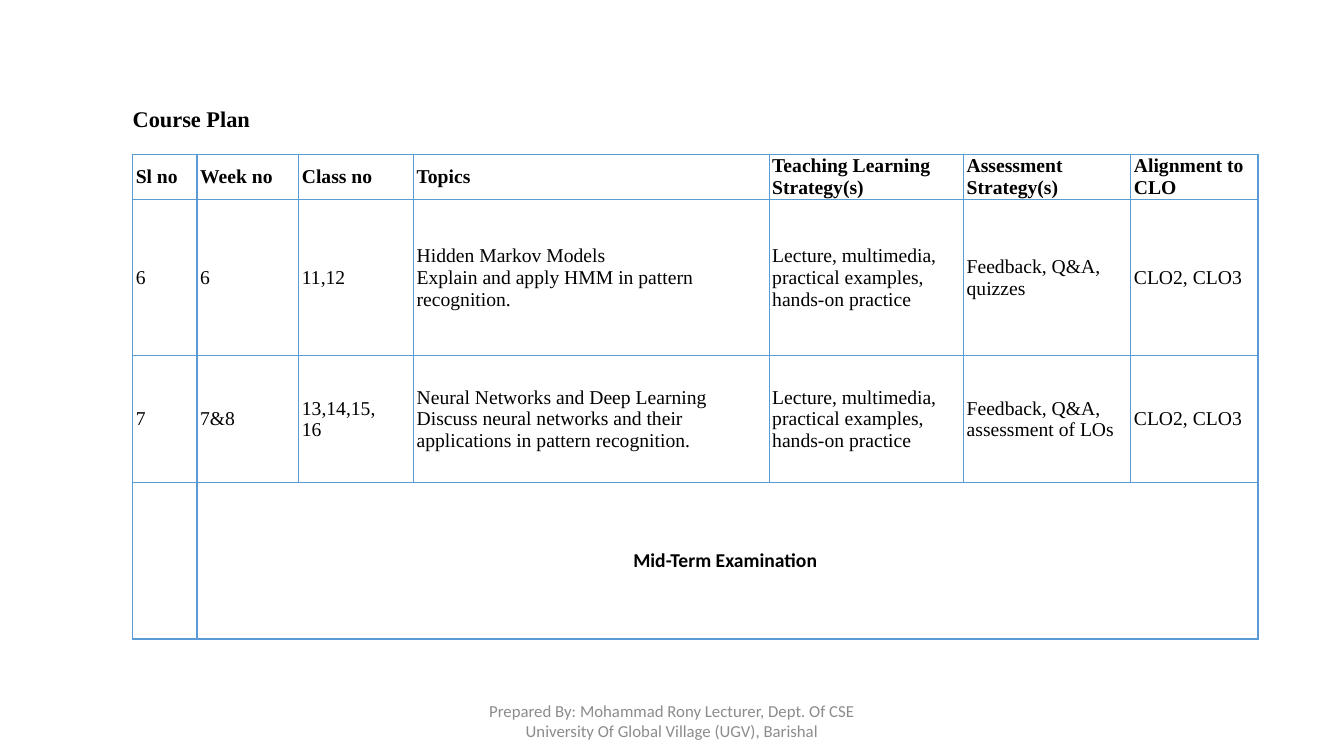
from lxml.etree import SubElement
from pptx import Presentation
from pptx.dml.color import RGBColor
from pptx.enum.text import MSO_ANCHOR, PP_ALIGN
from pptx.oxml.ns import qn
from pptx.util import Pt

BLACK = RGBColor(0x00, 0x00, 0x00)
GREY = RGBColor(0x8C, 0x8C, 0x8C)
BLUE = RGBColor(0x5B, 0x9B, 0xD5)
SERIF, SANS = "Times New Roman", "Calibri"

COLUMN_WIDTHS = [46, 72.7, 82, 254, 138.9, 119.5, 90.8]
ROW_HEIGHTS = [28, 111.6, 90.7, 111.6]
TEACHING = "Lecture, multimedia, practical examples, hands-on practice"
COURSE_ROWS = [
    ["Sl no", "Week no", "Class no", "Topics", "Teaching Learning Strategy(s)",
     "Assessment Strategy(s)", "Alignment to CLO"],
    ["6", "6", "11,12",
     "Hidden Markov Models\nExplain and apply HMM in pattern recognition.",
     TEACHING, "Feedback, Q&A, quizzes", "CLO2, CLO3"],
    ["7", "7&8", "13,14,15,\n16",
     "Neural Networks and Deep Learning\n"
     "Discuss neural networks and their applications in pattern recognition.",
     TEACHING, "Feedback, Q&A, assessment of LOs", "CLO2, CLO3"],
]
CELL_MARGINS = {"margin_left": Pt(2.2), "margin_top": Pt(0.7),
                "margin_right": Pt(0.7), "margin_bottom": Pt(0.7)}
NO_MARGINS = dict.fromkeys(CELL_MARGINS, 0)


def set_attributes(target, values):
    for name, value in values.items():
        setattr(target, name, value)


def write_text(tf, text, color=BLACK, align=PP_ALIGN.LEFT, **font):
    """Fill a text frame, one paragraph per line of text."""
    tf.text = text
    for p in tf.paragraphs:
        p.alignment = align
        for r in p.runs:
            set_attributes(r.font, font)
            r.font.color.rgb = color


def add_text(slide, left, top, width, height, text, frame, **style):
    tf = slide.shapes.add_textbox(Pt(left), Pt(top), Pt(width), Pt(height)).text_frame
    tf.word_wrap = True
    set_attributes(tf, frame)
    write_text(tf, text, **style)


def add_borders(cell):
    tc_pr = cell._tc.get_or_add_tcPr()
    for side in ("lnL", "lnR", "lnT", "lnB"):
        ln = SubElement(tc_pr, qn(f"a:{side}"), w=str(Pt(1)))
        fill = SubElement(ln, qn("a:solidFill"))
        SubElement(fill, qn("a:srgbClr"), val=str(BLUE))


def add_course_table(slide, left, top):
    table = slide.shapes.add_table(
        len(ROW_HEIGHTS), len(COLUMN_WIDTHS), Pt(left), Pt(top),
        Pt(sum(COLUMN_WIDTHS)), Pt(sum(ROW_HEIGHTS))).table
    set_attributes(table, {"first_row": False, "horz_banding": False})
    for column, width in zip(table.columns, COLUMN_WIDTHS):
        column.width = Pt(width)
    for row, height in zip(table.rows, ROW_HEIGHTS):
        row.height = Pt(height)
    for cell in table.iter_cells():
        add_borders(cell)
        cell.fill.background()
        cell.vertical_anchor = MSO_ANCHOR.MIDDLE

    for i, texts in enumerate(COURSE_ROWS):
        for j, text in enumerate(texts):
            cell = table.cell(i, j)
            set_attributes(cell, CELL_MARGINS)
            write_text(cell.text_frame, text, name=SERIF, size=Pt(14), bold=i == 0)

    exam_row = len(COURSE_ROWS)
    exam = table.cell(exam_row, 1)
    exam.merge(table.cell(exam_row, len(COLUMN_WIDTHS) - 1))
    write_text(exam.text_frame, "Mid-Term Examination ", align=PP_ALIGN.CENTER,
               name=SANS, size=Pt(14), bold=True)


def main():
    prs = Presentation()
    prs.slide_width, prs.slide_height = Pt(960), Pt(540)
    slide = prs.slides.add_slide(prs.slide_layouts[6])
    add_course_table(slide, 94.8, 110.2)
    add_text(slide, 94.8, 75, 100, 20, "Course Plan", NO_MARGINS,
             name=SERIF, size=Pt(16), bold=True)
    add_text(slide, 318, 500.5, 324, 28.8,
             "Prepared By: Mohammad Rony Lecturer, Dept. Of CSE "
             "University Of Global Village (UGV), Barishal",
             {"vertical_anchor": MSO_ANCHOR.MIDDLE},
             color=GREY, align=PP_ALIGN.CENTER, name=SANS, size=Pt(12))
    prs.save("out.pptx")


if __name__ == "__main__":
    main()
